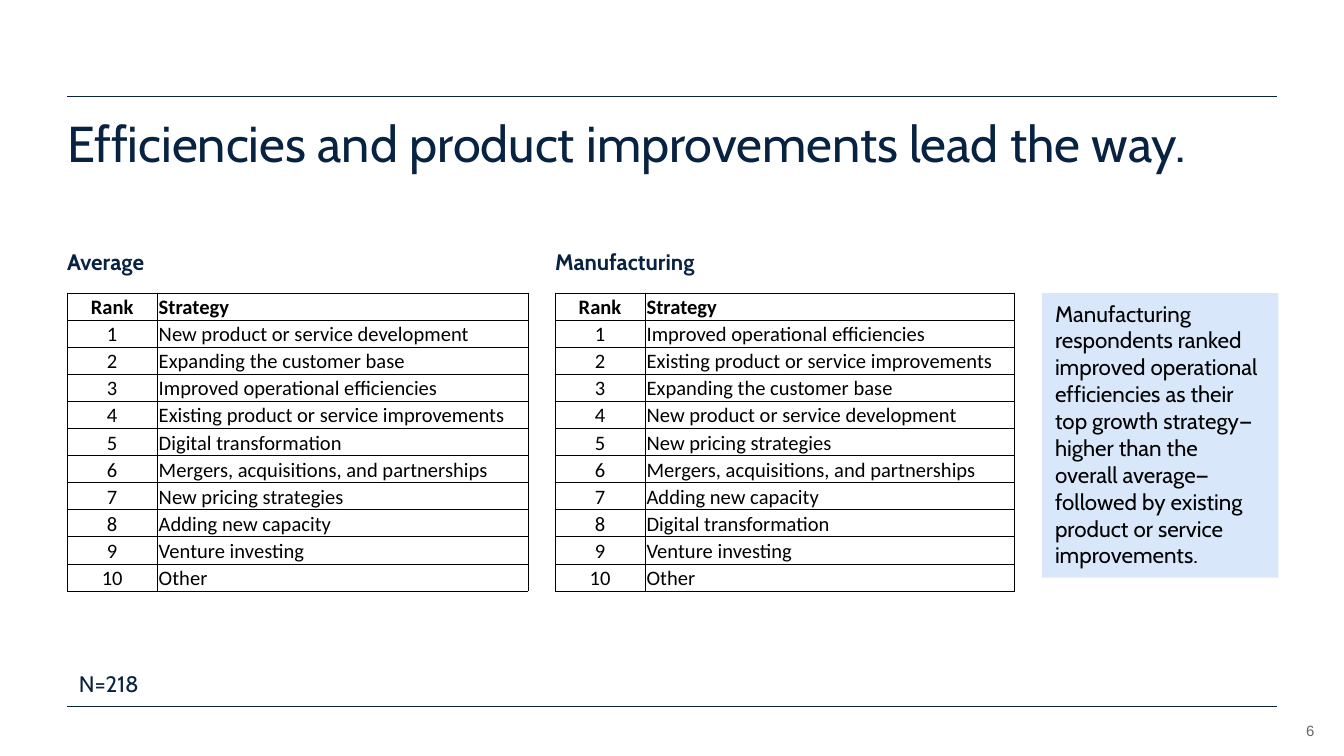
from dataclasses import dataclass

from lxml.etree import SubElement
from pptx import Presentation
from pptx.dml.color import RGBColor as Color
from pptx.enum.shapes import MSO_CONNECTOR as Connector, MSO_SHAPE as Shape
from pptx.enum.text import MSO_ANCHOR as Anchor, PP_ALIGN as Align
from pptx.oxml.ns import qn
from pptx.util import Cm, Pt


@dataclass(frozen=True)
class Theme:
    navy: str = "082241"
    black: str = "000000"
    grey: str = "666666"
    pale_blue: str = "D8E8FA"
    heading_font: str = "Cabin"
    table_font: str = "Calibri"
    number_font: str = "Arial"
    title_size: int = 27
    body_size: int = 12
    table_size: int = 11
    number_size: int = 8
    line_width: float = 0.5


THEME = Theme()

LEFT, CONTENT_WIDTH = 1.27, 22.86
TABLE_TOP, TABLE_HEIGHT, RANK_WIDTH = 5.54, 5.64, 1.7
INSET = 0.25  # default side margin of a text box

# Each table: heading, left edge, strategy column width, ranked strategies
RANKINGS = [
    ("Average", LEFT, 7.01, [
        "New product or service development",
        "Expanding the customer base",
        "Improved operational efficiencies",
        "Existing product or service improvements",
        "Digital transformation",
        "Mergers, acquisitions, and partnerships",
        "New pricing strategies",
        "Adding new capacity",
        "Venture investing",
        "Other",
    ]),
    ("Manufacturing", 10.49, 6.98, [
        "Improved operational efficiencies",
        "Existing product or service improvements",
        "Expanding the customer base",
        "New product or service development",
        "New pricing strategies",
        "Mergers, acquisitions, and partnerships",
        "Adding new capacity",
        "Digital transformation",
        "Venture investing",
        "Other",
    ]),
]

CALLOUT = (
    "Manufacturing respondents ranked improved operational efficiencies as "
    "their top growth strategy—higher than the overall average—followed by "
    "existing product or service improvements."
)


def add_span(para, text, size, color, font=THEME.heading_font, bold=False):
    span = para.add_run()
    span.text = text
    span.font.name = font
    span.font.size = Pt(size)
    span.font.bold = bold
    span.font.color.rgb = Color.from_string(color)


def set_margins(target, left, top, right, bottom):
    target.margin_left, target.margin_top = Cm(left), Cm(top)
    target.margin_right, target.margin_bottom = Cm(right), Cm(bottom)


def add_text(page, left, top, width, height):
    """Add a wrapping text box; return its frame and first paragraph."""
    box = page.shapes.add_textbox(Cm(left), Cm(top), Cm(width), Cm(height))
    frame = box.text_frame
    frame.word_wrap = True
    return frame, frame.paragraphs[0]


def add_rule(page, top):
    rule = page.shapes.add_connector(
        Connector.STRAIGHT, Cm(LEFT), Cm(top), Cm(LEFT + CONTENT_WIDTH), Cm(top))
    rule.line.color.rgb = Color.from_string(THEME.navy)
    rule.line.width = Pt(THEME.line_width)
    SubElement(rule._element.spPr, qn("a:effectLst"))


def add_title(page, text):
    frame, para = add_text(page, LEFT, 2.24, CONTENT_WIDTH, 1.4)
    set_margins(frame, 0, 0, 0, 0)
    para.line_spacing = 0.9
    add_span(para, text, THEME.title_size, THEME.navy)


def add_label(page, text, left, top, width, bold=False):
    para = add_text(page, left, top, width, 0.76)[1]
    add_span(para, text, THEME.body_size, THEME.navy, bold=bold)


def add_callout(page, text):
    box = page.shapes.add_shape(
        Shape.RECTANGLE, Cm(19.69), Cm(TABLE_TOP), Cm(4.47), Cm(5.38))
    box.shadow.inherit = False
    box.fill.solid()
    box.fill.fore_color.rgb = Color.from_string(THEME.pale_blue)
    box.line.fill.background()
    frame = box.text_frame
    frame.word_wrap = True
    frame.vertical_anchor = Anchor.TOP
    para = frame.paragraphs[0]
    para.alignment = Align.LEFT
    add_span(para, text, THEME.body_size, THEME.black)


def add_borders(cell):
    properties = cell._tc.get_or_add_tcPr()
    for position, side in enumerate(("lnL", "lnR", "lnT", "lnB")):
        border = properties.makeelement(
            qn(f"a:{side}"), {"w": str(Pt(THEME.line_width))})
        fill = SubElement(border, qn("a:solidFill"))
        SubElement(fill, qn("a:srgbClr"), val=THEME.black)
        properties.insert(position, border)


def fill_cell(cell, text, alignment, bold):
    cell.fill.background()
    add_borders(cell)
    set_margins(cell, 0.03, 0.03, 0.03, 0)
    cell.vertical_anchor = Anchor.BOTTOM
    para = cell.text_frame.paragraphs[0]
    para.alignment = alignment
    add_span(para, text, THEME.table_size, THEME.black, THEME.table_font, bold)


def add_ranking(page, left, strategy_width, strategies):
    rows = [("Rank", "Strategy")]
    rows += [(str(rank), name) for rank, name in enumerate(strategies, start=1)]
    widths = (RANK_WIDTH, strategy_width)
    table = page.shapes.add_table(
        len(rows), len(widths), Cm(left), Cm(TABLE_TOP),
        Cm(sum(widths)), Cm(TABLE_HEIGHT)).table
    table.horz_banding = False
    for column, width in zip(table.columns, widths):
        column.width = Cm(width)
    for row_index, values in enumerate(rows):
        for column_index, value in enumerate(values):
            alignment = Align.LEFT if column_index else Align.CENTER
            fill_cell(table.cell(row_index, column_index), value,
                      alignment, bold=row_index == 0)


def add_page_number(page, number):
    frame, para = add_text(page, 23.65, 13.51, 1.19, 0.46)
    set_margins(frame, 0, 0, 0, 0)
    frame.vertical_anchor = Anchor.BOTTOM
    para.alignment = Align.RIGHT
    add_span(para, number, THEME.number_size, THEME.grey, THEME.number_font)


def main():
    deck = Presentation()
    deck.slide_width, deck.slide_height = Cm(25.4), Cm(14.29)
    page = deck.slides.add_slide(deck.slide_layouts[6])

    # Page frame
    for top in (1.83, 13.36):
        add_rule(page, top)
    add_page_number(page, "6")
    add_title(page, "Efficiencies and product improvements lead the way.")

    # Rankings with their headings
    for heading, left, strategy_width, strategies in RANKINGS:
        add_label(page, heading, left - INSET, 4.57, 5.79, bold=True)
        add_ranking(page, left, strategy_width, strategies)

    # Takeaway and sample size
    add_callout(page, CALLOUT)
    add_label(page, "N=218", 1.24, 12.55, 4.6)

    deck.save("out.pptx")


if __name__ == "__main__":
    main()
